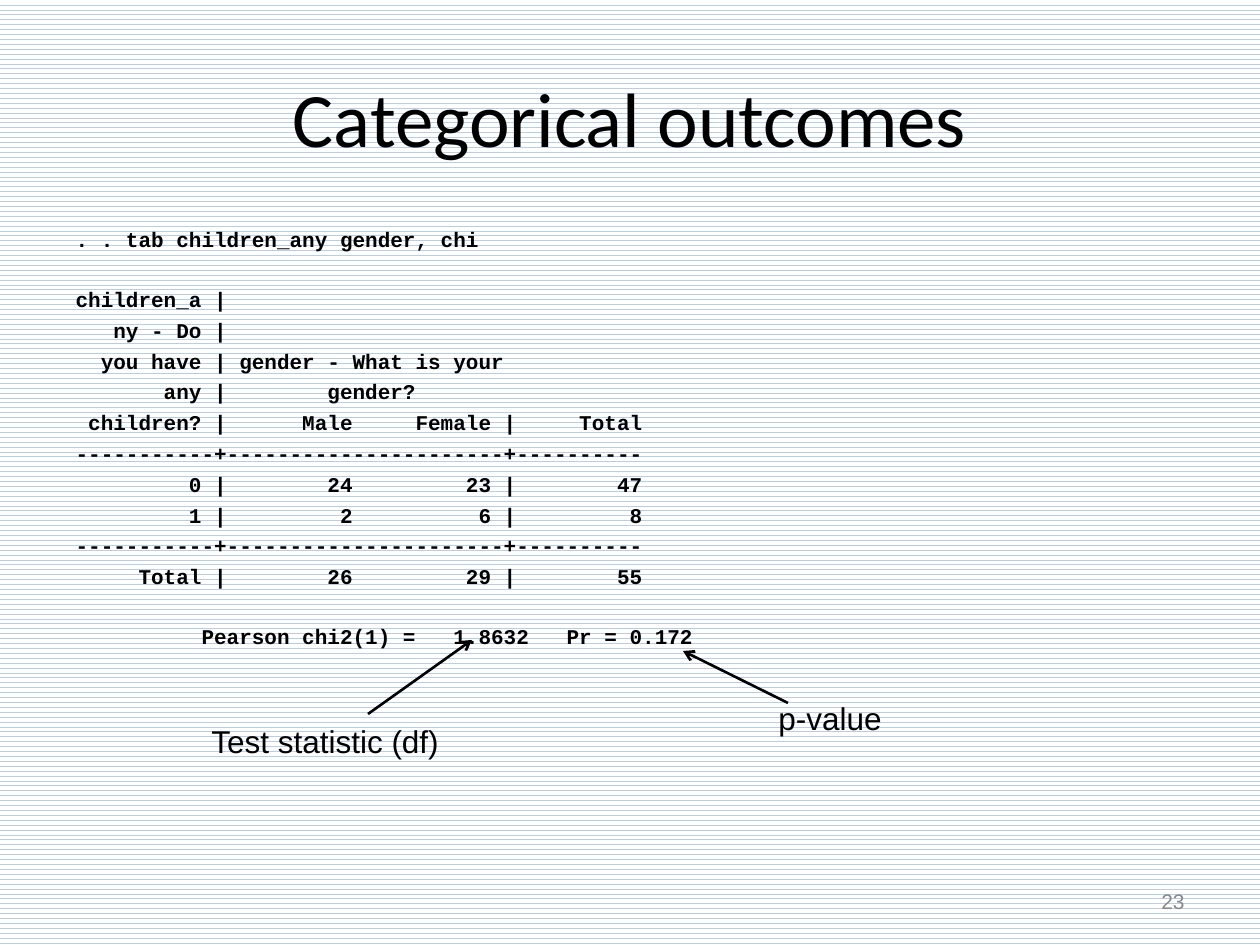
"""Build the slide on a chi-squared test of categorical outcomes."""
from lxml.etree import SubElement
from pptx import Presentation
from pptx.dml.color import RGBColor
from pptx.enum.dml import MSO_PATTERN as Pattern
from pptx.enum.shapes import MSO_CONNECTOR as Connector
from pptx.enum.text import MSO_ANCHOR as Anchor, MSO_AUTO_SIZE as AutoSize, PP_ALIGN as Align
from pptx.oxml.ns import qn
from pptx.util import Pt

EMU_PER_PX = 914400 / 126
LABEL = dict(size=Pt(18), name="Arial")
LABEL_FRAME = dict(word_wrap=False, auto_size=AutoSize.SHAPE_TO_FIT_TEXT)


def px(*lengths):
    return [round(length * EMU_PER_PX) for length in lengths]


def color(hex_code):
    return RGBColor.from_string(hex_code)


def assign(target, values):
    for key, value in values.items():
        setattr(target, key, value)


def row(label, first, second, total):
    return f"{label:>10} |{first:>10}{second:>11} |{total:>10}"


class Deck:
    ink = "000000"

    def __init__(self, width, height):
        self.presentation = Presentation()
        size = dict(zip(("slide_width", "slide_height"), px(width, height)))
        assign(self.presentation, size)
        self.slide = self.presentation.slides.add_slide(self.presentation.slide_layouts[1])

    def background(self, fore, back):
        fill = self.slide.background.fill
        fill.patterned()
        fill.pattern = Pattern.WAVE
        fill.fore_color.rgb = color(fore)
        fill.back_color.rgb = color(back)

    def add_words(self, paragraph, text, font, ink=None):
        run = paragraph.add_run()
        run.text = text
        assign(run.font, font)
        run.font.color.rgb = color(ink or self.ink)

    def place(self, shape, box):
        assign(shape, dict(zip(("left", "top", "width", "height"), px(*box))))

    def title(self, text, box, font):
        heading = self.slide.shapes.title
        self.place(heading, box)
        heading.text_frame.vertical_anchor = Anchor.MIDDLE
        paragraph = heading.text_frame.paragraphs[0]
        paragraph.alignment = Align.CENTER
        self.add_words(paragraph, text, font)

    def listing(self, blocks, box, font, line_gap, block_gap):
        body = self.slide.placeholders[1]
        self.place(body, box)
        frame = body.text_frame
        frame.auto_size = AutoSize.NONE
        paragraph = frame.paragraphs[0]
        for block_index, block in enumerate(blocks):
            for line_index, line in enumerate(block):
                if block_index or line_index:
                    paragraph = frame.add_paragraph()
                starts_block = block_index and not line_index
                paragraph.space_before = Pt(block_gap if starts_block else line_gap)
                properties = paragraph._p.get_or_add_pPr()
                properties.set("marL", "0")
                properties.set("indent", "0")
                SubElement(properties, qn("a:buNone"))
                self.add_words(paragraph, line, font)

    def text(self, text, box, font, frame, align=Align.LEFT, ink=None):
        label = self.slide.shapes.add_textbox(*px(*box))
        assign(label.text_frame, frame)
        paragraph = label.text_frame.paragraphs[0]
        paragraph.alignment = align
        self.add_words(paragraph, text, font, ink)

    def arrow(self, start, end):
        pointer = self.slide.shapes.add_connector(Connector.STRAIGHT, *px(*start, *end))
        pointer.line.width = Pt(1.5)
        pointer.line.color.rgb = color(self.ink)
        SubElement(pointer.line._get_or_add_ln(), qn("a:tailEnd"), type="arrow")
        SubElement(pointer._element.spPr, qn("a:effectLst"))


def main():
    deck = Deck(1260, 945)
    deck.background("B9CDE5", "FFFFFF")

    rule = "+".join("-" * count for count in (11, 22, 10))
    command = [". . tab children_any gender, chi"]
    crosstab = [
        "children_a |",
        f"{'ny - Do':>10} |",
        f"{'you have':>10} | gender - What is your",
        f"{'any':>10} |{'gender?':>15}",
        row("children?", "Male", "Female", "Total"),
        rule,
        row(0, 24, 23, 47),
        row(1, 2, 6, 8),
        rule,
        row("Total", 26, 29, 55),
    ]
    chi_test = [f"{'Pearson':>17} chi2(1) ={1.8632:>9}{'Pr':>5} = 0.172"]
    deck.listing([command, crosstab, chi_test], (63, 220, 1134, 624),
                 dict(size=Pt(12), name="Courier New", bold=True), 3.2, 20)

    deck.text("23", (903, 876, 294, 50), dict(size=Pt(12), name="Arial"),
              dict(word_wrap=True, vertical_anchor=Anchor.MIDDLE), Align.RIGHT, "898989")
    deck.arrow((368, 714), (472, 640))
    deck.arrow((788, 703), (683, 651))
    deck.text("Test statistic (df)", (199, 716, 256, 50), LABEL, LABEL_FRAME)
    deck.text("p-value", (766, 693, 130, 50), LABEL, LABEL_FRAME)
    deck.title("Categorical outcomes", (63, 38, 1134, 158), dict(size=Pt(44), name="Calibri"))
    deck.presentation.save("out.pptx")


if __name__ == "__main__":
    main()
